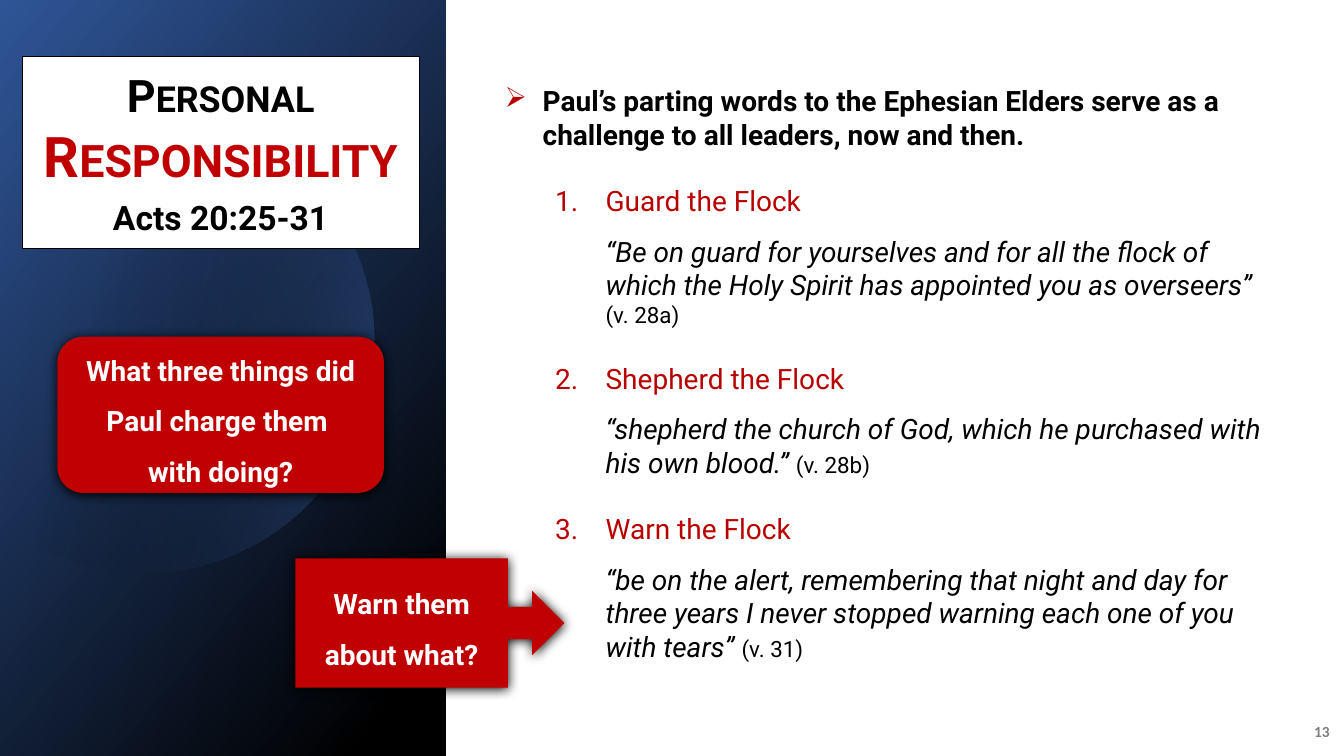
import math
from lxml import etree
from pptx import Presentation
from pptx.dml.color import RGBColor
from pptx.enum.shapes import MSO_SHAPE
from pptx.enum.text import MSO_ANCHOR, MSO_AUTO_SIZE, PP_ALIGN
from pptx.oxml.ns import qn
from pptx.util import Pt

ROUNDED = MSO_SHAPE.ROUNDED_RECTANGLE
CALLOUT = MSO_SHAPE.RIGHT_ARROW_CALLOUT
RECTANGLE = MSO_SHAPE.RECTANGLE
MIDDLE = MSO_ANCHOR.MIDDLE
NO_AUTOFIT = MSO_AUTO_SIZE.NONE
CENTER = PP_ALIGN.CENTER
RIGHT = PP_ALIGN.RIGHT

BLACK = RGBColor(0x00, 0x00, 0x00)
WHITE = RGBColor(0xFF, 0xFF, 0xFF)
GRAY = RGBColor(0x80, 0x80, 0x80)
RED = RGBColor(0xC0, 0x00, 0x00)
DARK_RED = RGBColor(0xB9, 0x00, 0x00)
NAVY = RGBColor(0x2F, 0x55, 0x97)
BLUE = RGBColor(0x44, 0x72, 0xC4)


def style_run(run, size, color, bold=False, italic=False, name="Roboto"):
    run.font.name = name
    run.font.size = Pt(size)
    run.font.color.rgb = color
    run.font.bold = bold
    run.font.italic = italic


def fill_gradient(shape, stops, angle):
    shape.shadow.inherit = False
    shape.line.fill.background()
    shape.fill.background()
    properties = shape._element.spPr
    gradient = etree.Element(qn("a:gradFill"), rotWithShape="1")
    stop_list = etree.SubElement(gradient, qn("a:gsLst"))
    for position, color, opacity in stops:
        stop = etree.SubElement(stop_list, qn("a:gs"), pos=str(position * 1000))
        fill_color = etree.SubElement(stop, qn("a:srgbClr"), val=str(color))
        etree.SubElement(fill_color, qn("a:alpha"), val=str(opacity * 1000))
    etree.SubElement(gradient, qn("a:lin"), ang=str(angle * 60000), scaled="0")
    properties.replace(properties.find(qn("a:noFill")), gradient)


presentation = Presentation()
presentation.slide_width = Pt(960)
presentation.slide_height = Pt(540)
slide = presentation.slides.add_slide(presentation.slide_layouts[5])
shapes = slide.shapes

number_box = shapes.add_textbox(Pt(921.6), Pt(508.3), Pt(35.3), Pt(28.8))
number_box.text_frame.word_wrap = True
number_box.text_frame.vertical_anchor = MIDDLE
number_box.text_frame.text = "13"
number_paragraph = number_box.text_frame.paragraphs[0]
number_paragraph.alignment = RIGHT
style_run(number_paragraph.runs[0], 11, GRAY, bold=True, name="Calibri")

panel = shapes.add_shape(RECTANGLE, 0, 0, Pt(318.2), Pt(540))
fill_gradient(panel, [(0, NAVY, 100), (92, BLACK, 100)], 40)

center_x, center_y, radius = 102.5, 244, 165
half_sweep = math.acos(-center_x / radius)
steps = 120
angles = [half_sweep * (2 * step / steps - 1) for step in range(steps + 1)]
arc = [(Pt(center_x + radius * math.cos(angle)), Pt(center_y + radius * math.sin(angle)))
       for angle in angles]
builder = shapes.build_freeform(*arc[0])
builder.add_line_segments(arc[1:], close=True)
disc = builder.convert_to_shape()
fill_gradient(disc, [(29, BLACK, 0), (100, BLUE, 43)], 14)

title = shapes.title
title.left, title.top, title.width, title.height = Pt(15.8), Pt(40.3), Pt(283.7), Pt(137.5)
geometry = etree.SubElement(title._element.spPr, qn("a:prstGeom"), prst="roundRect")
etree.SubElement(geometry, qn("a:avLst"))
title.fill.solid()
title.fill.fore_color.rgb = WHITE
title.line.color.rgb = BLACK
title.line.width = Pt(0.75)
frame = title.text_frame
frame.margin_left = frame.margin_right = frame.margin_top = frame.margin_bottom = 0
frame.vertical_anchor = MIDDLE
frame.word_wrap = True
frame.auto_size = NO_AUTOFIT
frame.text = "Personal\vResponsibility\nActs 20:25-31"
for paragraph in frame.paragraphs:
    paragraph.alignment = CENTER
    paragraph.space_after = Pt(6)
heading, reference = frame.paragraphs
for run, size, color in zip(heading.runs, (32, 40), (BLACK, RED)):
    style_run(run, size, color, bold=True)
    run.font._element.set("cap", "small")
style_run(reference.runs[0], 24, BLACK, bold=True)
shapes._spTree.append(title._element)

body = shapes.add_textbox(Pt(353.5), Pt(56.2), Pt(567.4), Pt(458.6))
body_frame = body.text_frame
body_frame.word_wrap = True
body_frame.text = ("Paul’s parting words to the Ephesian Elders serve as a "
                   "challenge to all leaders, now and then.")
lead = body_frame.paragraphs[0]
lead_properties = lead._p.get_or_add_pPr()
lead_properties.set("marL", str(Pt(27)))
lead_properties.set("indent", str(Pt(-27)))
bullet_color = etree.SubElement(lead_properties, qn("a:buClr"))
etree.SubElement(bullet_color, qn("a:srgbClr"), val=str(DARK_RED))
etree.SubElement(lead_properties, qn("a:buChar"), char="➢")
style_run(lead.runs[0], 20, BLACK, bold=True)

charges = [
    ("Guard the Flock",
     "“Be on guard for yourselves and for all the flock of which the Holy Spirit "
     "has appointed you as overseers” ", "(v. 28a)"),
    ("Shepherd the Flock",
     "“shepherd the church of God, which he purchased with his own blood.” ", "(v. 28b)"),
    ("Warn the Flock",
     "“be on the alert, remembering that night and day for three years I never "
     "stopped warning each one of you with tears” ", "(v. 31)"),
]
for number, (charge, quote, verse) in enumerate(charges, 1):
    item = body_frame.add_paragraph()
    item.text = charge
    item.space_before = Pt(23.5)
    item.space_after = Pt(12)
    item_properties = item._p.get_or_add_pPr()
    item_properties.set("marL", str(Pt(72)))
    item_properties.set("indent", str(Pt(-36)))
    etree.SubElement(item_properties, qn("a:buFont"), typeface="+mj-lt")
    etree.SubElement(item_properties, qn("a:buAutoNum"), type="arabicPeriod",
                     startAt=str(number))
    style_run(item.runs[0], 20, DARK_RED)

    quotation = body_frame.add_paragraph()
    quotation_properties = quotation._p.get_or_add_pPr()
    quotation_properties.set("marL", str(Pt(72)))
    quotation_properties.set("indent", "0")
    for text, size, italic in ((quote, 20, True), (verse, 16, False)):
        run = quotation.add_run()
        run.text = text
        style_run(run, size, BLACK, italic=italic)

questions = [
    (ROUNDED, (41, 240.5, 233.3, 111.6), [],
     "What three things did Paul charge them \vwith doing?"),
    (CALLOUT, (211, 398.9, 192.2, 92.2), [0.25, 0.25, 0.25, 0.79],
     "Warn them about what?"),
]
for preset, bounds, adjustments, text in questions:
    question = shapes.add_shape(preset, *(Pt(length) for length in bounds))
    for index, value in enumerate(adjustments):
        question.adjustments[index] = value
    question.fill.solid()
    question.fill.fore_color.rgb = RED
    question.line.fill.background()
    question.shadow.inherit = False
    effects = question._element.spPr.find(qn("a:effectLst"))
    shadow = etree.SubElement(effects, qn("a:outerShdw"), blurRad=str(Pt(8.5)),
                              dist=str(Pt(1)), dir="5400000", algn="t", rotWithShape="0")
    etree.SubElement(shadow, qn("a:srgbClr"), val=str(BLACK))
    frame = question.text_frame
    frame.word_wrap = True
    frame.vertical_anchor = MIDDLE
    frame.margin_left = frame.margin_right = Pt(7.2)
    frame.margin_top, frame.margin_bottom = 0, Pt(3.6)
    frame.text = text
    paragraph = frame.paragraphs[0]
    paragraph.alignment = CENTER
    paragraph.line_spacing = 1.5
    for run in paragraph.runs:
        style_run(run, 20, WHITE, bold=True)

presentation.save("out.pptx")
